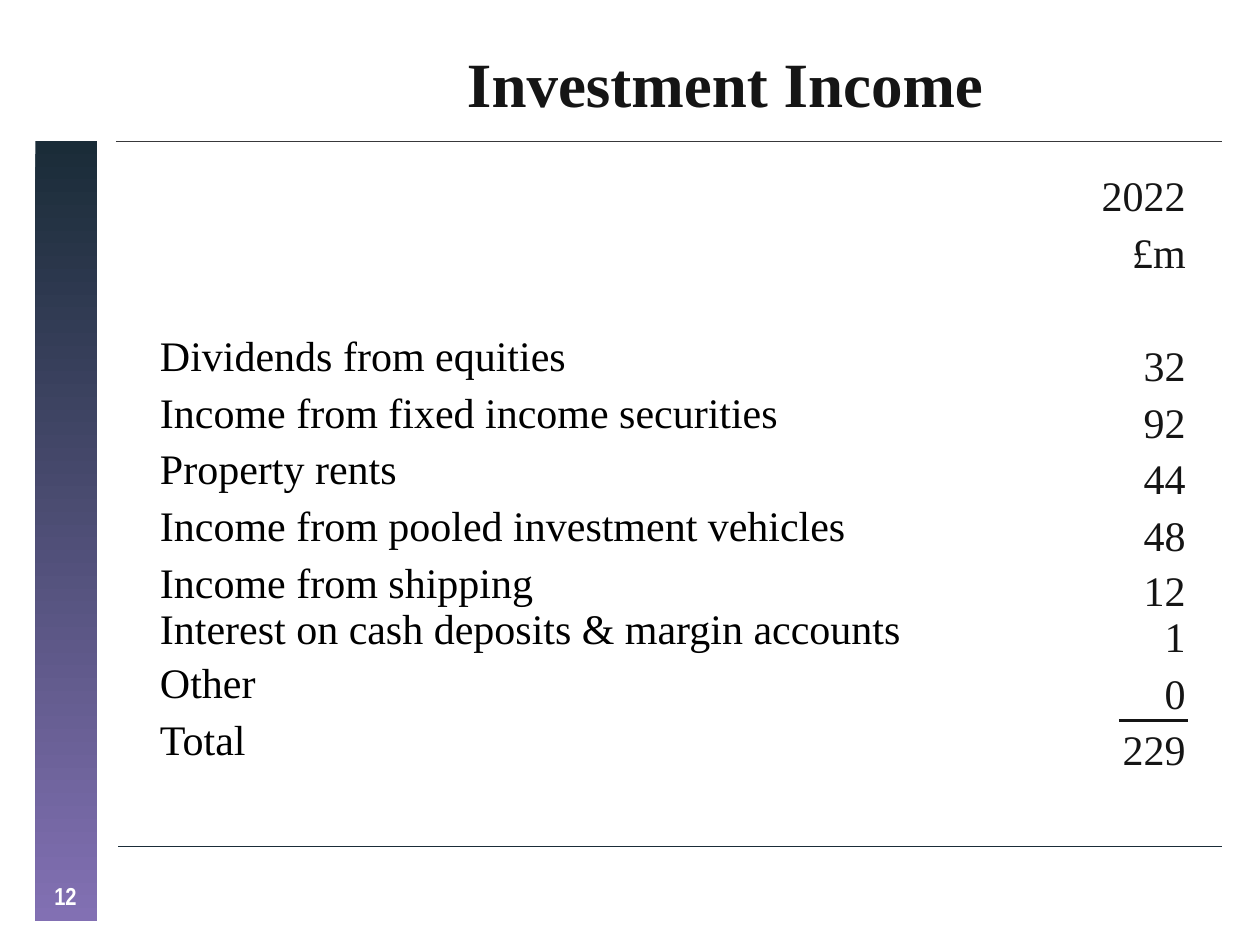
from lxml.etree import SubElement
from pptx import Presentation
from pptx.dml.color import RGBColor
from pptx.enum.shapes import MSO_CONNECTOR, MSO_SHAPE
from pptx.enum.text import MSO_ANCHOR, MSO_AUTO_SIZE, PP_ALIGN
from pptx.oxml.ns import qn
from pptx.util import Inches, Pt

COLORS = {"ink": "151515", "label": "000000", "white": "FFFFFF",
          "top": "1A2C38", "violet": "8270B3", "rule": "38383A"}
SERIF = "Times New Roman"
ROW = 0.45
ROWS = [
    ("", "2022"),
    ("", "£m"),
    ("", ""),
    ("Dividends from equities", "32"),
    ("Income from fixed income securities", "92"),
    ("Property rents", "44"),
    ("Income from pooled investment vehicles", "48"),
    ("Income from shipping\nInterest on cash deposits & margin accounts", "12\n1"),
    ("Other", "0"),
    ("Total", "229"),
]


def color(name):
    return RGBColor.from_string(COLORS[name])


def inset(item, x, y):
    item.margin_left = item.margin_right = Inches(x)
    item.margin_top = item.margin_bottom = Inches(y)


def style(frame, size, font, name, align, bold=False):
    for para in frame.paragraphs:
        para.alignment = align
        para.font.size = Pt(size)
        para.font.name = font
        para.font.bold = bold
        para.font.color.rgb = color(name)


def add_rule(slide, left, right, y, name, width):
    line = slide.shapes.add_connector(
        MSO_CONNECTOR.STRAIGHT, Inches(left), Inches(y), Inches(right), Inches(y))
    line.line.color.rgb = color(name)
    line.line.width = Pt(width)
    SubElement(line._element.spPr, qn("a:effectLst"))


def add_title(slide, left, top, width, height):
    title = slide.shapes.title
    title.left, title.top = Inches(left), Inches(top)
    title.width, title.height = Inches(width), Inches(height)
    frame = title.text_frame
    frame.text = "Investment Income"
    frame.auto_size = MSO_AUTO_SIZE.NONE
    frame.vertical_anchor = MSO_ANCHOR.MIDDLE
    inset(frame, 0, 0)
    style(frame, 36, SERIF, "ink", PP_ALIGN.CENTER, True)


def add_band(slide, left, top, width, height):
    """Draw the gradient side band with the page number at its foot."""
    band = slide.shapes.add_shape(
        MSO_SHAPE.RECTANGLE, Inches(left), Inches(top), Inches(width), Inches(height))
    band.shadow.inherit = False
    band.line.fill.background()
    band.fill.gradient()
    band.fill.gradient_angle = 270
    for stop, name, place in zip(band.fill.gradient_stops, ("top", "violet"), (0, 1)):
        stop.color.rgb = color(name)
        stop.position = place

    tall = 0.35
    box = slide.shapes.add_textbox(
        Inches(left + 0.01), Inches(top + height - tall - 0.03),
        Inches(width - 0.03), Inches(tall))
    frame = box.text_frame
    frame.word_wrap = True
    frame.text = "12"
    frame.vertical_anchor = MSO_ANCHOR.MIDDLE
    inset(frame, 0.09, 0.04)
    style(frame, 14, "Arial Narrow", "white", PP_ALIGN.CENTER, True)


def add_border(cell):
    props = cell._tc.get_or_add_tcPr()
    for index, side in enumerate(("lnL", "lnR", "lnT", "lnB")):
        line = props.makeelement(qn(f"a:{side}"), {"w": str(Pt(1))})
        props.insert(index, line)
        fill = SubElement(line, qn("a:solidFill"))
        SubElement(fill, qn("a:srgbClr"), val=COLORS["white"])


def add_income(slide, left, top, widths):
    """Place the income table and the sum rule above its last row."""
    heights = [0.8 if "\n" in label else ROW for label, _ in ROWS]
    table = slide.shapes.add_table(
        len(ROWS), len(widths), Inches(left), Inches(top),
        Inches(sum(widths)), Inches(sum(heights))).table
    table.first_row = table.horz_banding = False
    for col, width in zip(table.columns, widths):
        col.width = Inches(width)
    looks = (("label", PP_ALIGN.LEFT, MSO_ANCHOR.TOP),
             ("ink", PP_ALIGN.RIGHT, MSO_ANCHOR.BOTTOM))
    for row, height, texts in zip(table.rows, heights, ROWS):
        row.height = Inches(height)
        for cell, text, (name, align, anchor) in zip(row.cells, texts, looks):
            cell.text = text
            cell.fill.background()
            cell.vertical_anchor = anchor
            inset(cell, 0.02, 0)
            style(cell.text_frame, 24, SERIF, name, align)
            add_border(cell)
    right = left + sum(widths)
    add_rule(slide, right - 0.55, right, top + sum(heights) - ROW + 0.02, "ink", 1.5)


def main():
    deck = Presentation()
    deck.slide_width, deck.slide_height = Inches(10), Inches(7.5)
    slide = deck.slides.add_slide(deck.slide_layouts[5])
    add_rule(slide, 0.92, 9.7, 1.12, "rule", 0.5)
    add_rule(slide, 0.94, 9.7, 6.72, "top", 0.5)
    add_band(slide, 0.28, 1.12, 0.49, 6.19)
    add_title(slide, 1.83, 0.21, 7.85, 0.88)
    add_income(slide, 1.25, 1.3, (6.34, 1.84))
    deck.save("out.pptx")


if __name__ == "__main__":
    main()
